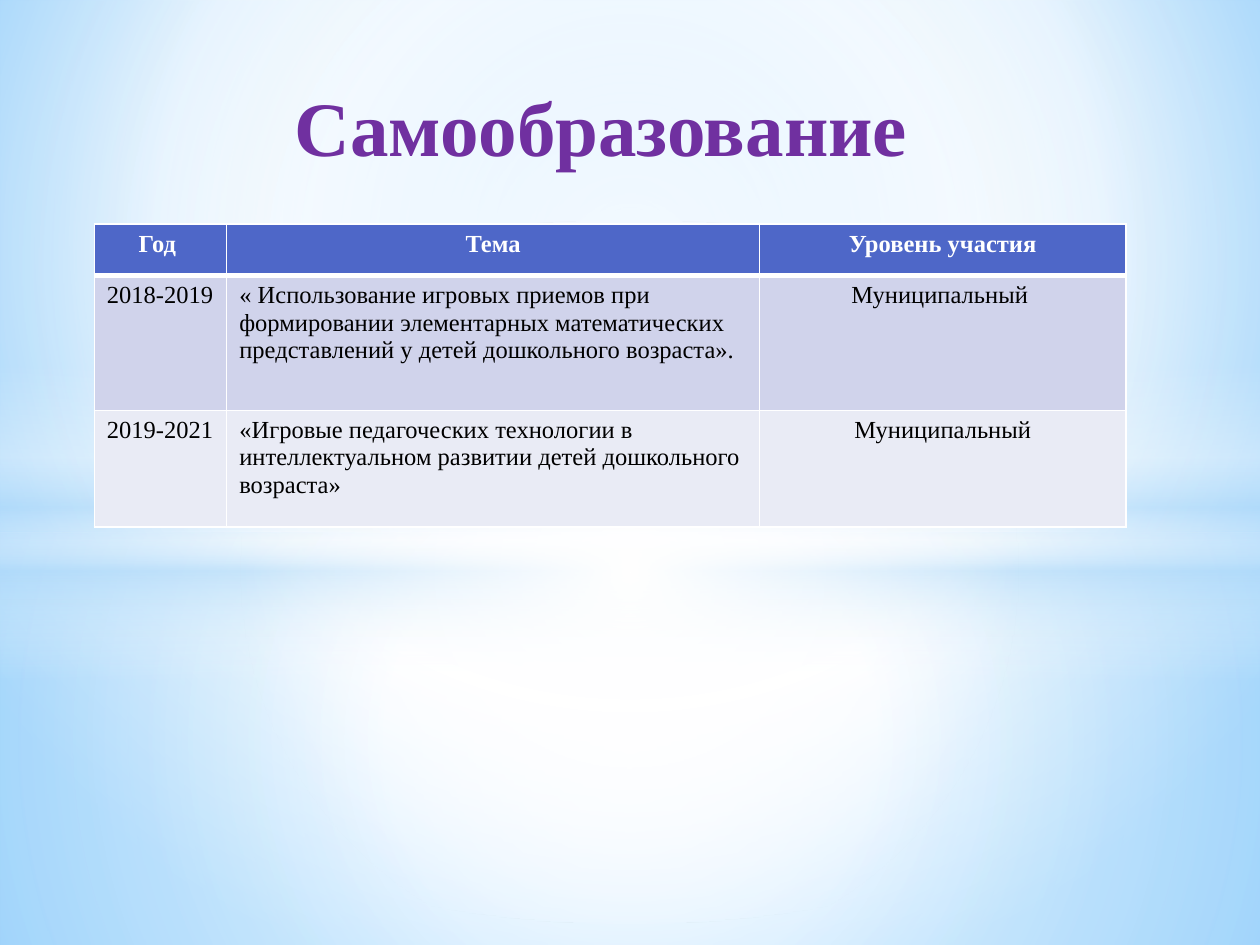
from dataclasses import dataclass
from typing import Optional

from lxml import etree
from pptx import Presentation
from pptx import util as u
from pptx.dml.color import RGBColor
from pptx.enum import shapes, text
from pptx.oxml.ns import qn

WHITE = RGBColor(0xFF, 0xFF, 0xFF)
BLACK = RGBColor(0x00, 0x00, 0x00)
PURPLE = RGBColor(0x70, 0x30, 0xA0)
HEADER_BLUE = RGBColor(0x4E, 0x67, 0xC8)
ROW_DARK = RGBColor(0xD0, 0xD3, 0xEB)
ROW_LIGHT = RGBColor(0xE9, 0xEB, 0xF5)
PALE_BLUE = RGBColor(0xB4, 0xDC, 0xFA)
SKY = RGBColor(0x9E, 0xD5, 0xFF)
DEEP_SKY = RGBColor(0x5B, 0xB9, 0xFF)
FONT = "Times New Roman"
CENTER = text.PP_ALIGN.CENTER
LEFT = text.PP_ALIGN.LEFT


@dataclass(frozen=True)
class Stop:
    position: int
    color: RGBColor
    opacity: int = 100


@dataclass(frozen=True)
class Gradient:
    stops: tuple[Stop, ...]
    focus: Optional[tuple[int, int, int, int]] = (50, 50, 50, 50)


@dataclass(frozen=True)
class Glow:
    kind: shapes.MSO_SHAPE
    top: float
    height: float
    gradient: Gradient


@dataclass(frozen=True)
class TableRow:
    height: float
    fill: RGBColor
    color: RGBColor
    bold: bool
    alignments: tuple
    values: tuple[str, ...]
    bottom_border: float = 1


BACKDROP = Gradient((Stop(0, SKY), Stop(60, WHITE), Stop(100, DEEP_SKY)), (20, 10, 20, 60))
RECTANGLE = shapes.MSO_SHAPE.RECTANGLE
GLOWS = (
    Glow(RECTANGLE, 10.74, 8.31,
         Gradient((Stop(0, WHITE, 91), Stop(37, WHITE, 76), Stop(100, PALE_BLUE, 79)))),
    Glow(RECTANGLE, 0, 10.74,
         Gradient((Stop(0, WHITE, 89), Stop(48, WHITE, 62), Stop(100, PALE_BLUE, 79)))),
    Glow(RECTANGLE, 7.37, 6.35,
         Gradient((Stop(0, WHITE, 0), Stop(29, WHITE, 30), Stop(45, PALE_BLUE, 40),
                   Stop(55, WHITE, 26), Stop(65, PALE_BLUE, 60), Stop(100, WHITE, 0)), None)),
    Glow(shapes.MSO_SHAPE.OVAL, 4.45, 14.17,
         Gradient((Stop(0, WHITE), Stop(54, WHITE, 0)))),
)
COLUMN_WIDTHS = (2.67, 10.74, 7.39)
BODY_ALIGNMENTS = (LEFT, LEFT, CENTER)
ROWS = (
    TableRow(1.04, HEADER_BLUE, WHITE, True, (CENTER,) * 3,
             ("Год ", "Тема", "Уровень участия"), 3),
    TableRow(2.72, ROW_DARK, BLACK, False, BODY_ALIGNMENTS,
             ("2018-2019",
              "« Использование игровых приемов при формировании элементарных "
              "математических представлений у детей дошкольного возраста».",
              "Муниципальный ")),
    TableRow(2.34, ROW_LIGHT, BLACK, False, BODY_ALIGNMENTS,
             ("2019-2021",
              "«Игровые педагоческих технологии в интеллектуальном развитии "
              "детей дошкольного возраста»",
              "Муниципальный")),
)


def add_node(parent, tag: str, **attributes):
    values = {name: str(value) for name, value in attributes.items()}
    return etree.SubElement(parent, qn(tag), values)


def add_color(parent, color: RGBColor, opacity: int = 100) -> None:
    node = add_node(parent, "a:srgbClr", val=color)
    if opacity < 100:
        add_node(node, "a:alpha", val=opacity * 1000)


def paint_gradient(owner, fill, gradient: Gradient) -> None:
    fill.gradient()
    node = owner.find(".//" + qn("a:gradFill"))
    for child in list(node):
        node.remove(child)
    stops = add_node(node, "a:gsLst")
    for stop in gradient.stops:
        add_color(add_node(stops, "a:gs", pos=stop.position * 1000), stop.color, stop.opacity)
    if gradient.focus is None:
        add_node(node, "a:lin", ang=90 * 60000, scaled=0)
    else:
        sides = {side: share * 1000 for side, share in zip("ltrb", gradient.focus)}
        add_node(add_node(node, "a:path", path="circle"), "a:fillToRect", **sides)


def add_glow(slide, glow: Glow) -> None:
    shape = slide.shapes.add_shape(
        glow.kind, u.Cm(0), u.Cm(glow.top), u.Cm(25.4), u.Cm(glow.height))
    shape.shadow.inherit = False
    shape.line.fill.background()
    paint_gradient(shape.element, shape.fill, glow.gradient)


def write(paragraph, content: str, size: float, color: RGBColor, bold: bool, alignment) -> None:
    paragraph.alignment = alignment
    run = paragraph.add_run()
    run.text = content
    run.font.name = FONT
    run.font.size = u.Pt(size)
    run.font.bold = bold
    run.font.color.rgb = color


def add_title(slide) -> None:
    shape = slide.shapes.add_textbox(u.Cm(4.29), u.Cm(1.32), u.Cm(15.65), u.Cm(2.44))
    frame = shape.text_frame
    frame.word_wrap = True
    frame.vertical_anchor = text.MSO_ANCHOR.MIDDLE
    write(frame.paragraphs[0], "Самообразование", 44, PURPLE, True, CENTER)


def add_borders(cell, top: float, bottom: float) -> None:
    properties = cell._tc.get_or_add_tcPr()
    for tag, width in (("a:lnL", 1), ("a:lnR", 1), ("a:lnT", top), ("a:lnB", bottom)):
        line = add_node(properties, tag, w=u.Pt(width))
        add_color(add_node(line, "a:solidFill"), WHITE)


def add_topics_table(slide) -> None:
    table = slide.shapes.add_table(
        len(ROWS), len(COLUMN_WIDTHS), u.Cm(1.9), u.Cm(4.52),
        u.Cm(sum(COLUMN_WIDTHS)), u.Cm(sum(row.height for row in ROWS))).table
    for column, width in zip(table.columns, COLUMN_WIDTHS):
        column.width = u.Cm(width)
    top_border = 1
    for table_row, row in zip(table.rows, ROWS):
        table_row.height = u.Cm(row.height)
        for cell, value, alignment in zip(table_row.cells, row.values, row.alignments):
            write(cell.text_frame.paragraphs[0], value, 14, row.color, row.bold, alignment)
            add_borders(cell, top_border, row.bottom_border)
            cell.fill.solid()
            cell.fill.fore_color.rgb = row.fill
        top_border = row.bottom_border


def main() -> None:
    presentation = Presentation()
    presentation.slide_width = u.Cm(25.4)
    presentation.slide_height = u.Cm(19.05)
    slide = presentation.slides.add_slide(presentation.slide_layouts[6])
    paint_gradient(slide.element, slide.background.fill, BACKDROP)
    for glow in GLOWS:
        add_glow(slide, glow)
    add_title(slide)
    add_topics_table(slide)
    presentation.save("out.pptx")


if __name__ == "__main__":
    main()
